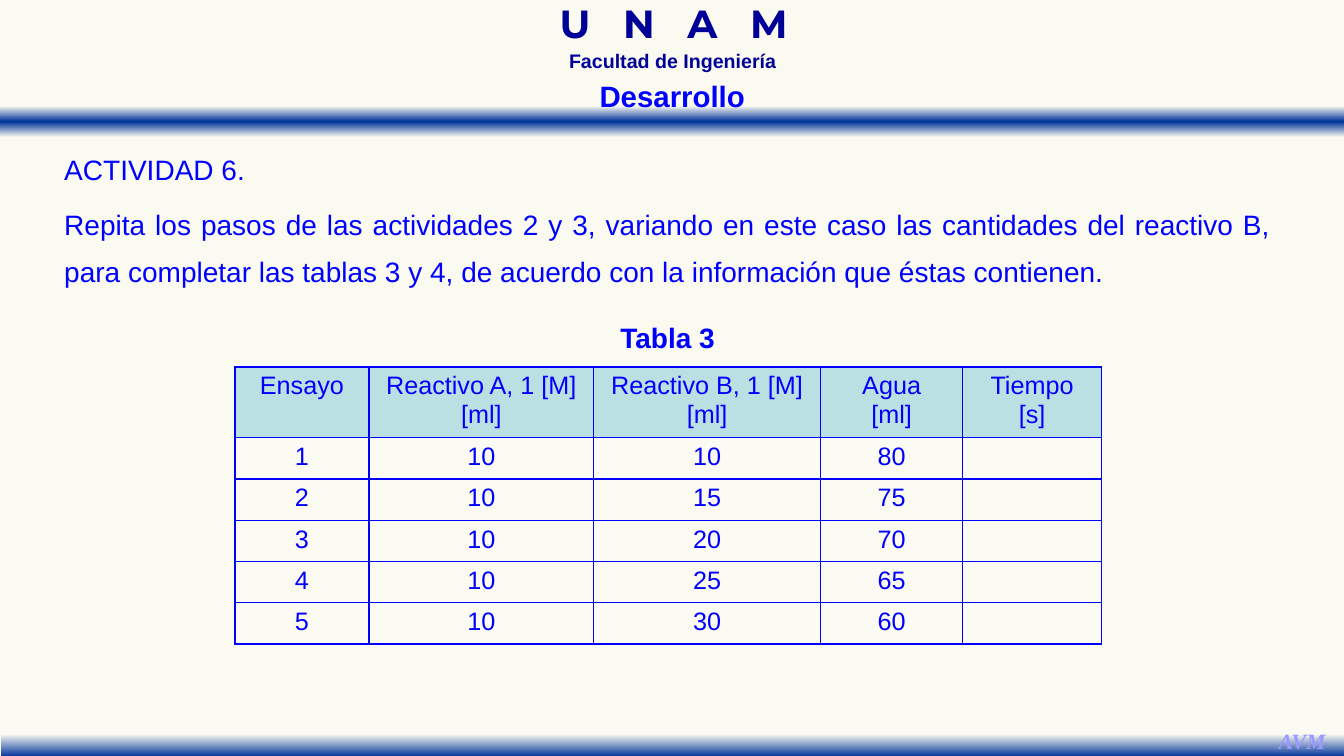
"""Build the Actividad 6 slide with its reagent table."""
from lxml.etree import SubElement
from pptx import Presentation
from pptx.dml.color import RGBColor
from pptx.enum.shapes import MSO_SHAPE as Shape
from pptx.enum.text import MSO_ANCHOR as Anchor, MSO_AUTO_SIZE as Auto, PP_ALIGN as Align
from pptx.oxml import parse_xml
from pptx.oxml.ns import nsdecls, qn
from pptx.util import Cm, Pt

NAVY, BLUE, IVORY, BAND = "000099", "0000FF", "FAFAF2", "003399"
color = RGBColor.from_string


def write(frame, lines, size, hue=BLUE, face="Arial", bold=False, italic=False,
          align=Align.CENTER, space=None, after=None):
    frame.text = "\n".join(lines)
    for para in frame.paragraphs:
        para.alignment = align
        para.line_spacing = space
        para.space_after = after
        font = para.font
        font.name, font.size, font.bold, font.italic = face, Pt(size), bold, italic
        font.color.rgb = color(hue)


deck = Presentation()
deck.slide_width, deck.slide_height = Cm(33.87), Cm(19.05)
slide = deck.slides.add_slide(deck.slide_layouts[5])
slide.background.fill.solid()
slide.background.fill.fore_color.rgb = color("FAFAF0")
shapes = slide.shapes

bands = [
    (-0.03, 2.67, [(0, IVORY), (50, BAND), (100, IVORY)]),
    (0.03, 18.28, [(28, IVORY), (100, BAND)]),
]
for left, top, stops in bands:
    band = shapes.add_shape(Shape.RECTANGLE, Cm(left), Cm(top), Cm(33.91), Cm(0.79))
    band.shadow.inherit = False
    band.line.fill.background()
    band.fill.gradient()
    band.fill.gradient_angle = 270
    ramp = band._element.spPr.find(".//" + qn("a:gsLst"))
    ramp.clear()
    for pos, hue in stops:
        stop = SubElement(ramp, qn("a:gs"), pos=str(pos * 1000))
        SubElement(stop, qn("a:srgbClr"), val=hue)

title = shapes.title
title.left, title.top, title.width, title.height = Cm(14.83), Cm(1.83), Cm(4.22), Cm(1.14)
frame = title.text_frame
frame.auto_size, frame.word_wrap, frame.vertical_anchor = Auto.NONE, False, Anchor.TOP
write(frame, ["Desarrollo"], 21, bold=True)
shapes._spTree.append(title._element)

task = ["ACTIVIDAD 6.",
        "Repita los pasos de las actividades 2 y 3, variando en este caso las cantidades "
        "del reactivo B, para completar las tablas 3 y 4, de acuerdo con la información "
        "que éstas contienen."]
texts = [
    (12.01, 0.18, 9.93, 1.14, ["U N A M"], 28,
     dict(hue=NAVY, face="Montserrat", bold=True, space=0.7)),
    (12.42, 1.27, 9.07, 0.69, ["Facultad de Ingeniería"], 14,
     dict(hue=NAVY, bold=True, space=0.7)),
    (31.95, 18.21, 1.73, 0.94, ["AVM"], 15.6,
     dict(hue="9999FF", face="Times New Roman", bold=True, italic=True)),
    (1.37, 3.38, 30.91, 4.06, task, 20,
     dict(align=Align.JUSTIFY, space=1.4, after=Pt(6))),
    (1.37, 7.52, 30.91, 1.42, ["Tabla 3"], 20, dict(bold=True, space=1.5)),
]
for left, top, width, height, lines, size, style in texts:
    box = shapes.add_textbox(Cm(left), Cm(top), Cm(width), Cm(height))
    box.text_frame.word_wrap = True
    write(box.text_frame, lines, size, **style)
    if size == 28:
        para = box.text_frame.paragraphs[0]
        para.runs[0].text = "U N A "
        para.runs[0].font._element.set("spc", "770")
        para.add_run().text = "M"

heads = [["Ensayo"], ["Reactivo A, 1 [M]", "[ml]"], ["Reactivo B, 1 [M]", "[ml]"],
         ["Agua", "[ml]"], ["Tiempo", "[s]"]]
rows = [heads]
for trial in range(1, 6):
    dose = 5 + 5 * trial
    rows.append([[str(trial)], ["10"], [str(dose)], [str(90 - dose)], [""]])
widths = [3.38, 5.66, 5.72, 3.58, 3.5]
grid = shapes.add_table(6, 5, Cm(5.92), Cm(9.25), Cm(sum(widths)), Cm(6.96)).table
grid.horz_banding = grid.first_row = False
for col, width in zip(grid.columns, widths):
    col.width = Cm(width)
for i, row in enumerate(rows):
    grid.rows[i].height = Cm(1.04 if i else 1.76)
    for j, lines in enumerate(row):
        cell = grid.cell(i, j)
        write(cell.text_frame, lines, 18)
        if i and i % 2 == 0:
            cell.fill.background()
        else:
            cell.fill.solid()
            cell.fill.fore_color.rgb = color("FFFFFF" if i else "BBE0E3")
        props = cell._tc.get_or_add_tcPr()
        if i % 2:
            SubElement(props.find(".//" + qn("a:srgbClr")), qn("a:alpha"), val="20000")
        for k, side in enumerate("LRTB"):
            props.insert(k, parse_xml(
                f'<a:ln{side} {nsdecls("a")} w="12700"><a:solidFill>'
                f'<a:srgbClr val="{BLUE}"/></a:solidFill></a:ln{side}>'))

deck.save("out.pptx")
